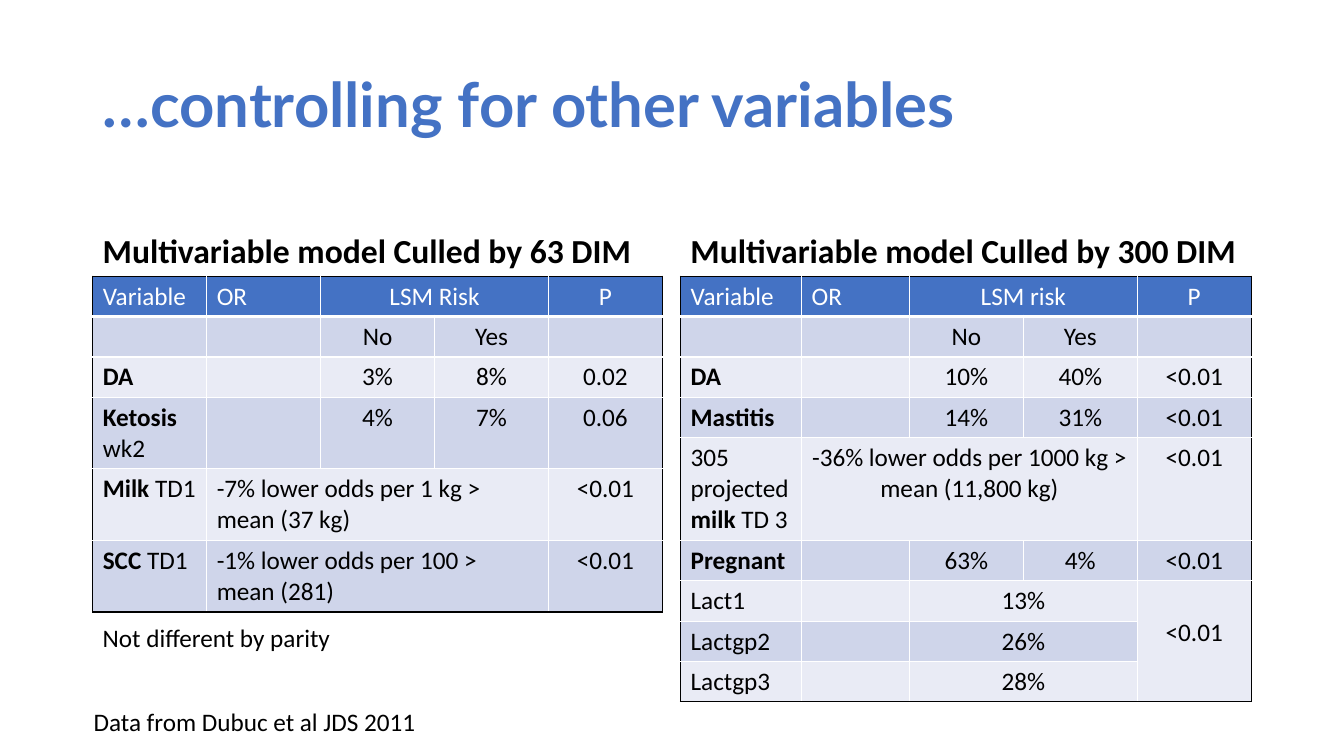
from lxml import etree
from pptx import Presentation
from pptx.dml.color import RGBColor
from pptx.enum.text import MSO_ANCHOR as Anchor, PP_ALIGN as Align
from pptx.oxml.ns import qn
from pptx.util import Inches, Pt

COLORS = {"blue": "4472C4", "band": "CFD5EA", "pale": "E9EBF5",
          "black": "000000", "white": "FFFFFF"}

deck = Presentation()
deck.slide_width, deck.slide_height = Inches(13.33), Inches(7.5)
page = deck.slides.add_slide(deck.slide_layouts[6])


def write(para, text, size, color, font="Calibri", bold=False):
    """Fill a paragraph; text between ** marks is bold."""
    para.font.name, para.font.size = font, Pt(size)
    para.font.color.rgb = RGBColor.from_string(COLORS[color])
    parts = text.split("**")
    if len(parts) == 1:
        para.font.bold = bold
    for index, part in enumerate(parts):
        if part:
            span = para.add_run()
            span.text = part
            if len(parts) > 1:
                span.font.bold = index % 2 == 1


def add_border(cell, side, color, width):
    line = etree.SubElement(cell._tc.get_or_add_tcPr(), qn("a:ln" + side), w=str(Pt(width)))
    fill = etree.SubElement(line, qn("a:solidFill"))
    etree.SubElement(fill, qn("a:srgbClr"), val=COLORS[color])


# Title, table headings and notes
texts = [
    ("…controlling for other variables", 0.92, 0.34, 11.5, 1.45, 44, "blue", "Lato", True, Anchor.MIDDLE),
    ("Multivariable model Culled by 63 DIM", 0.92, 1.84, 5.64, 0.9, 24, "black", "Calibri", True, Anchor.BOTTOM),
    ("Multivariable model Culled by 300 DIM", 6.75, 1.84, 5.67, 0.9, 24, "black", "Calibri", True, Anchor.BOTTOM),
    ("Not different by parity", 0.92, 6.12, 3.99, 0.4, 18, "black", "Calibri", False, Anchor.TOP),
    ("Data from Dubuc et al JDS 2011", 0.83, 6.96, 3.84, 0.4, 18, "black", "Calibri", False, Anchor.TOP),
]
for text, left, top, width, height, size, color, font, bold, anchor in texts:
    box = page.shapes.add_textbox(Inches(left), Inches(top), Inches(width), Inches(height))
    box.text_frame.word_wrap = True
    box.text_frame.vertical_anchor = anchor
    para = box.text_frame.paragraphs[0]
    if size > 18:
        para.line_spacing = 0.9
    write(para, text, size, color, font, bold)

# Tables: "<" joins a cell to the one on its left, "^" to the one above
models = [
    (0.92, [1.13] * 5, {3: 0.71, 4: 0.71, 5: 0.71}, Align.LEFT, [
        ["Variable", "OR", "LSM Risk", "<", "P"],
        ["", "", "No", "Yes", ""],
        ["**DA**", "", "3%", "8%", "0.02"],
        ["**Ketosis** wk2", "", "4%", "7%", "0.06"],
        ["**Milk** TD1", "-7% lower odds per 1 kg > mean (37 kg)", "<", "<", "<0.01"],
        ["**SCC** TD1", "-1% lower odds per 100 > mean (281)", "<", "<", "<0.01"],
    ]),
    (6.75, [1.2, 1.07, 1.13, 1.13, 1.13], {4: 1.02}, Align.CENTER, [
        ["Variable", "OR", "LSM risk", "<", "P"],
        ["", "", "No", "Yes", ""],
        ["**DA**", "", "10%", "40%", "<0.01"],
        ["**Mastitis**", "", "14%", "31%", "<0.01"],
        ["305 projected **milk** TD 3", "-36% lower odds per 1000 kg > mean (11,800 kg)", "<", "<", "<0.01"],
        ["**Pregnant**", "", "63%", "4%", "<0.01"],
        ["Lact1", "", "13%", "<", "<0.01"],
        ["Lactgp2", "", "26%", "<", "^"],
        ["Lactgp3", "", "28%", "<", "^"],
    ]),
]
for left, widths, tall_rows, effect_align, rows in models:
    heights = [tall_rows.get(r, 0.4) for r in range(len(rows))]
    table = page.shapes.add_table(len(rows), len(widths), Inches(left), Inches(2.74),
                                  Inches(sum(widths)), Inches(sum(heights))).table
    for column, width in zip(table.columns, widths):
        column.width = Inches(width)
    for row, height in zip(table.rows, heights):
        row.height = Inches(height)

    for r, row in enumerate(rows):
        for c, text in enumerate(row):
            cell = table.cell(r, c)
            # Join cells
            across = down = 1
            if text not in ("<", "^"):
                while c + across < len(row) and row[c + across] == "<":
                    across += 1
                while r + down < len(rows) and rows[r + down][c] == "^":
                    down += 1
                if across * down > 1:
                    cell.merge(table.cell(r + down - 1, c + across - 1))
            # Black outer frame, white inner lines, thick line under the header
            add_border(cell, "L", "black" if c == 0 else "white", 1)
            add_border(cell, "R", "black" if c + across == len(row) else "white", 1)
            add_border(cell, "T", "black" if r == 0 else "white", 1)
            add_border(cell, "B", "black" if r + down == len(rows) else "white", 3 if r == 0 else 1)
            fill_name = "blue" if r == 0 else "band" if r % 2 else "pale"
            cell.fill.solid()
            cell.fill.fore_color.rgb = RGBColor.from_string(COLORS[fill_name])
            if text in ("<", "^"):
                continue
            # Text
            if down > 1:
                cell.margin_top = Inches(0.36)
            para = cell.text_frame.paragraphs[0]
            if c > 1:
                para.alignment = Align.CENTER
            elif c == 1 and r > 0:
                para.alignment = effect_align
            write(para, text, 18, "white" if r == 0 else "black")

deck.save("out.pptx")
